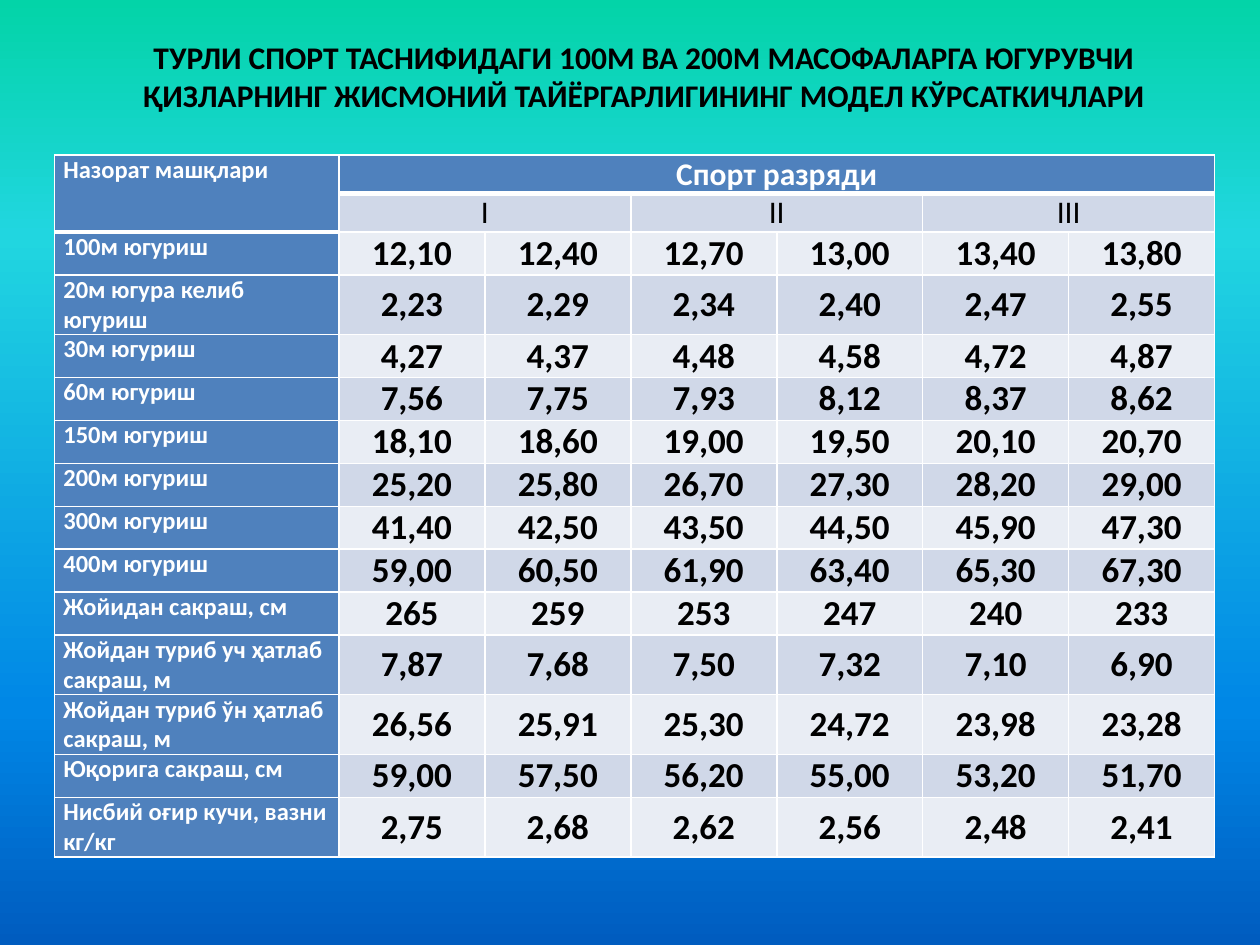
import lxml.etree
import pptx
import pptx.dml.color
import pptx.enum.text
import pptx.oxml.ns
import pptx.util

Pt = pptx.util.Pt
qn = pptx.oxml.ns.qn
ALIGN = pptx.enum.text.PP_ALIGN
ANCHOR = pptx.enum.text.MSO_ANCHOR

TITLE = ("ТУРЛИ СПОРТ ТАСНИФИДАГИ 100М ВА 200М МАСОФАЛАРГА ЮГУРУВЧИ "
         "ҚИЗЛАРНИНГ ЖИСМОНИЙ ТАЙЁРГАРЛИГИНИНГ МОДЕЛ КЎРСАТКИЧЛАРИ")
LABEL_HEADING = "Назорат машқлари"
RANK_HEADING = "Спорт разряди"
RANKS = ["I", "II", "III"]
RESULTS = [
    ("100м югуриш", "12,10 12,40 12,70 13,00 13,40 13,80"),
    ("20м югура келиб югуриш", "2,23 2,29 2,34 2,40 2,47 2,55"),
    ("30м югуриш", "4,27 4,37 4,48 4,58 4,72 4,87"),
    ("60м югуриш", "7,56 7,75 7,93 8,12 8,37 8,62"),
    ("150м югуриш", "18,10 18,60 19,00 19,50 20,10 20,70"),
    ("200м югуриш", "25,20 25,80 26,70 27,30 28,20 29,00"),
    ("300м югуриш", "41,40 42,50 43,50 44,50 45,90 47,30"),
    ("400м югуриш", "59,00 60,50 61,90 63,40 65,30 67,30"),
    ("Жойидан сакраш, см", "265 259 253 247 240 233"),
    ("Жойдан туриб уч ҳатлаб сакраш, м", "7,87 7,68 7,50 7,32 7,10 6,90"),
    ("Жойдан туриб ўн ҳатлаб сакраш, м", "26,56 25,91 25,30 24,72 23,98 23,28"),
    ("Юқорига сакраш, см", "59,00 57,50 56,20 55,00 53,20 51,70"),
    ("Нисбий оғир кучи, вазни кг/кг", "2,75 2,68 2,62 2,56 2,48 2,41"),
]
BACKGROUND = [(0, "03D4A8"), (25, "21D6E0"), (75, "0087E6"), (100, "005CBF")]
FONT = "Calibri"
WHITE, BLACK, BLUE = "FFFFFF", "000000", "4F81BD"
BANDS = ["E9EDF4", "D0D8E8"]
HEADER_ROWS = 2
LABEL_WIDTH, VALUE_WIDTH = 162.5, 83.4
SHORT_ROW, TALL_ROW = 19.5, 30.5
LONGEST_ONE_LINE_LABEL = 20


def color(code):
    return pptx.dml.color.RGBColor.from_string(code)


def format_paragraph(para, size, code, bold, align):
    para.alignment = align
    para.font.name = FONT
    para.font.size = Pt(size)
    para.font.bold = bold
    para.font.color.rgb = color(code)


def paint_background(page):
    fill = page.background.fill
    fill.gradient()
    fill.gradient_angle = 270
    stops = next(page.element.iter(qn("a:gsLst")))
    for stop in list(stops):
        stops.remove(stop)
    for percent, code in BACKGROUND:
        stop = lxml.etree.SubElement(stops, qn("a:gs"), pos=str(percent * 1000))
        lxml.etree.SubElement(stop, qn("a:srgbClr"), val=code)


def draw_borders(cell, row, column):
    heavy_edge = HEADER_ROWS if column == 0 else 1
    widths = {"L": 1, "R": 1,
              "T": 3 if row == heavy_edge else 1,
              "B": 3 if row + 1 == heavy_edge else 1}
    properties = cell._tc.get_or_add_tcPr()
    for side, width in widths.items():
        line = lxml.etree.SubElement(properties, qn("a:ln" + side), w=str(Pt(width)))
        solid = lxml.etree.SubElement(line, qn("a:solidFill"))
        lxml.etree.SubElement(solid, qn("a:srgbClr"), val=WHITE)


def style_cell(cell, row, column):
    draw_borders(cell, row, column)
    is_blue = row == 0 or column == 0
    cell.fill.solid()
    cell.fill.fore_color.rgb = color(BLUE if is_blue else BANDS[row % 2])
    cell.margin_left = cell.margin_right = Pt(5)
    cell.margin_top = cell.margin_bottom = 0
    cell.vertical_anchor = ANCHOR.TOP if column == 0 else ANCHOR.MIDDLE
    size = 14 if column == 0 else 18 if row < HEADER_ROWS else 20
    format_paragraph(cell.text_frame.paragraphs[0], size,
                     WHITE if is_blue else BLACK,
                     row != 1 or column == 0,
                     ALIGN.LEFT if column == 0 else ALIGN.CENTER)


def add_title(page):
    box = page.shapes.title
    box.left, box.top, box.width, box.height = Pt(36), Pt(21.6), Pt(664), Pt(44)
    frame = box.text_frame
    frame.text = TITLE
    frame.word_wrap = True
    frame.auto_size = pptx.enum.text.MSO_AUTO_SIZE.NONE
    frame.vertical_anchor = ANCHOR.MIDDLE
    format_paragraph(frame.paragraphs[0], 18, BLACK, True, ALIGN.CENTER)


def add_results(page):
    rank_cells = [text for rank in RANKS for text in (rank, "")]
    grid = [[LABEL_HEADING, RANK_HEADING] + [""] * (len(rank_cells) - 1),
            [""] + rank_cells]
    grid += [[label] + values.split() for label, values in RESULTS]
    columns = len(grid[0])
    heights = [SHORT_ROW] * HEADER_ROWS + [
        TALL_ROW if len(label) > LONGEST_ONE_LINE_LABEL else SHORT_ROW
        for label, values in RESULTS]
    widths = [LABEL_WIDTH] + [VALUE_WIDTH] * (columns - 1)
    table = page.shapes.add_table(len(grid), columns, Pt(31.2), Pt(88.6),
                                  Pt(sum(widths)), Pt(sum(heights))).table
    table.first_row = table.horz_banding = False
    for column, width in zip(table.columns, widths):
        column.width = Pt(width)
    for row, height in zip(table.rows, heights):
        row.height = Pt(height)
    for row, texts in enumerate(grid):
        for column, text in enumerate(texts):
            cell = table.cell(row, column)
            cell.text = text
            style_cell(cell, row, column)
    table.cell(0, 0).merge(table.cell(1, 0))
    table.cell(0, 1).merge(table.cell(0, columns - 1))
    for column in range(1, columns, 2):
        table.cell(1, column).merge(table.cell(1, column + 1))


def main():
    deck = pptx.Presentation()
    deck.slide_width, deck.slide_height = Pt(720), Pt(540)
    page = deck.slides.add_slide(deck.slide_layouts[5])
    paint_background(page)
    add_title(page)
    add_results(page)
    deck.save("out.pptx")


if __name__ == "__main__":
    main()
